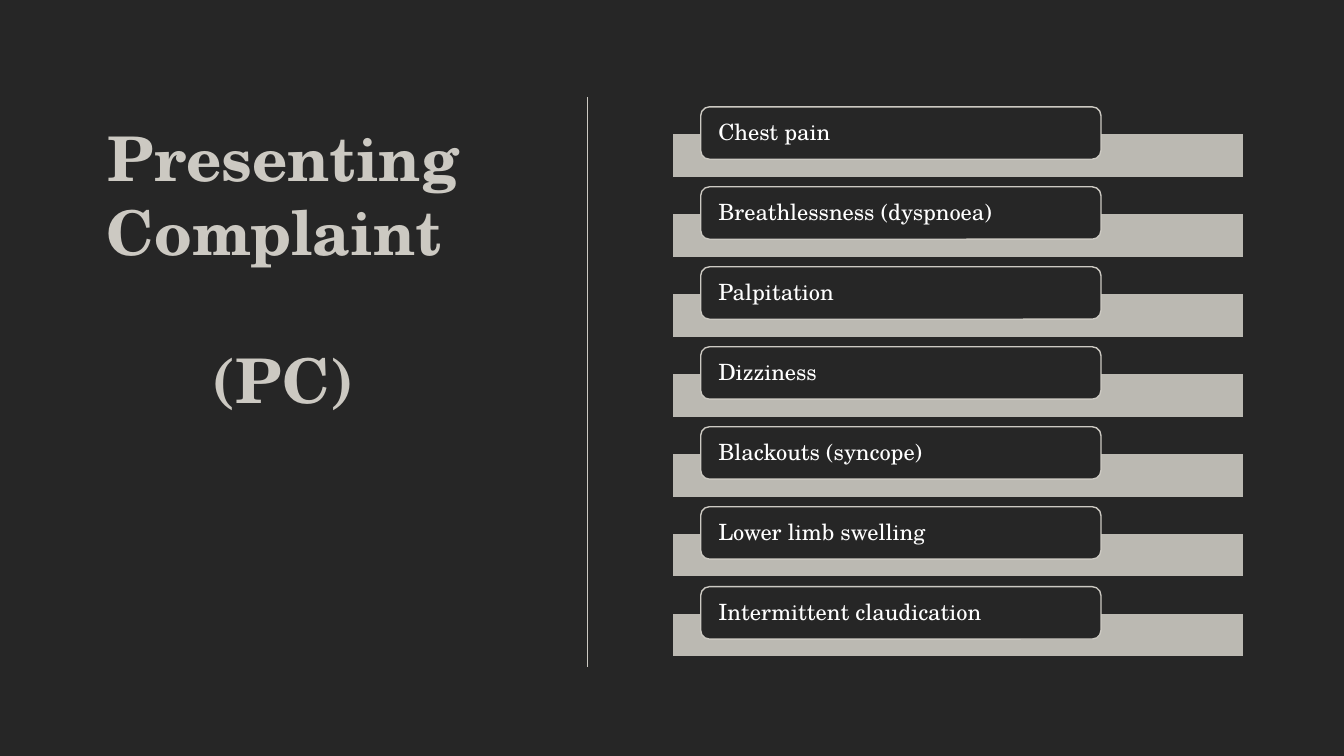
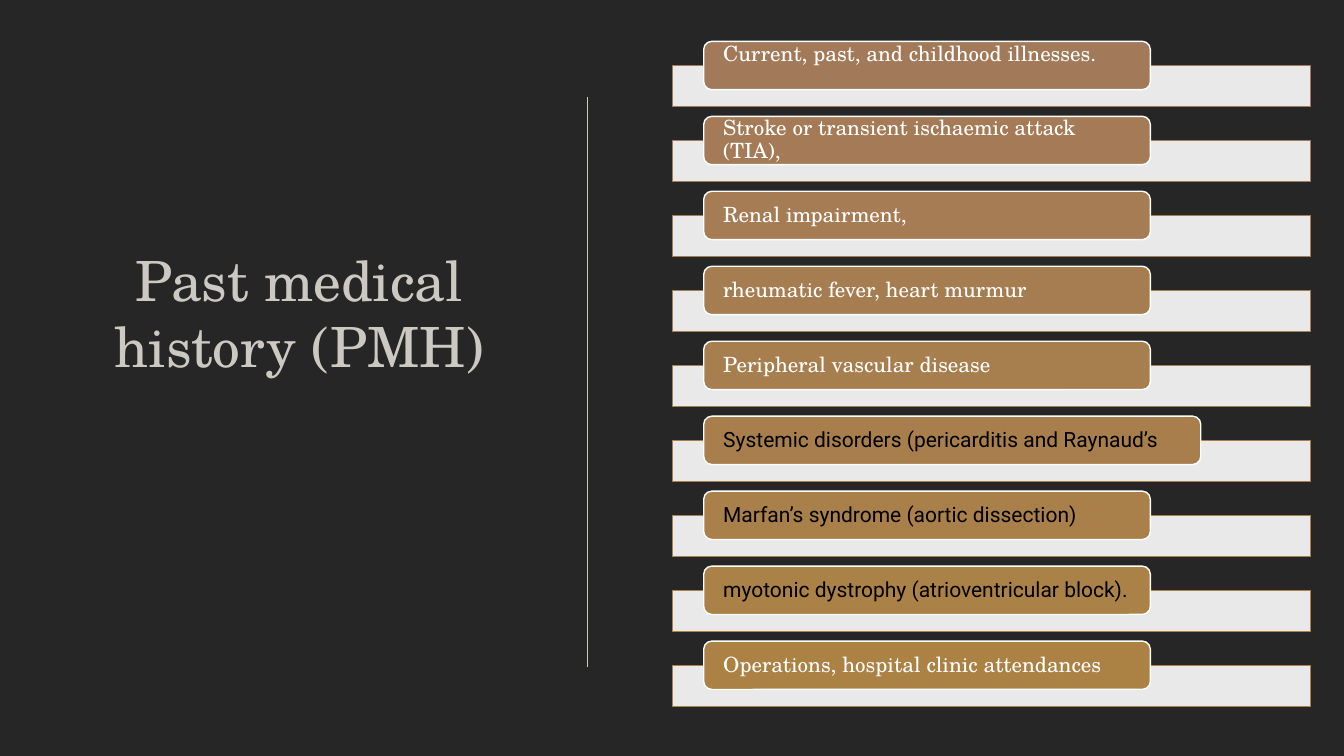
from lxml import etree
from pptx import Presentation, util as u
from pptx.dml.color import RGBColor
from pptx.enum import shapes, text
from pptx.oxml.ns import qn

INK, STONE, WHITE, BLACK = "262626", "CCC9C2", "FFFFFF", "000000"
SERIF, SANS = "TeX Gyre Schola", "Roboto"


def rgb(value):
    return RGBColor.from_string(value)


def blend(start, end, share):
    pairs = zip(rgb(start), rgb(end))
    return "".join(f"{round(a + (b - a) * share):02X}" for a, b in pairs)


class Deck:
    """Holds the shared style and the current slide."""

    def __init__(self):
        self.prs = Presentation()
        self.prs.slide_width = u.Inches(13.33)
        self.prs.slide_height = u.Inches(7.5)
        self.s = None

    def slide(self):
        self.s = self.prs.slides.add_slide(self.prs.slide_layouts[6])
        fill = self.s.background.fill
        fill.solid()
        fill.fore_color.rgb = rgb(INK)
        self.divider()

    def divider(self):
        x = u.Inches(5.83)
        line = self.s.shapes.add_connector(
            shapes.MSO_CONNECTOR.STRAIGHT, x, u.Inches(0.96), x, u.Inches(6.62))
        line.line.color.rgb = rgb(STONE)
        line.line.width = u.Pt(0.85)
        etree.SubElement(line._element.spPr, qn("a:effectLst"))

    def style(self, p, size, color, font=SERIF, bold=False):
        for r in p.runs:
            r.font.size = u.Pt(size)
            r.font.name = font
            r.font.bold = bold
            r.font.color.rgb = rgb(color)

    def title(self, content, x, y, h, size, bold=False, gap=0):
        sp = self.s.shapes.add_textbox(*map(u.Inches, (x, y, 4.06, h)))
        tf = sp.text_frame
        tf.word_wrap = True
        tf.text = content
        for i, p in enumerate(tf.paragraphs):
            p.alignment = text.PP_ALIGN.CENTER
            if i:
                p.space_before = u.Pt(gap)
            self.style(p, size, STONE, bold=bold)

    def shape(self, kind, x, y, w, h, fill, line):
        sp = self.s.shapes.add_shape(kind, *map(u.Inches, (x, y, w, h)))
        sp.shadow.inherit = False
        sp.fill.solid()
        sp.fill.fore_color.rgb = rgb(fill)
        sp.line.color.rgb = rgb(line)
        sp.line.width = u.Pt(1)
        return sp

    def bar(self, y, w, h, fill, line):
        sp = self.shape(shapes.MSO_SHAPE.RECTANGLE, 6.67, y, w, h, fill, line)
        color = sp._element.spPr.find(qn("a:solidFill"))[0]
        etree.SubElement(color, qn("a:alpha"), val="90000")

    def label(self, content, x, y, w, h, fill, line, size, inset,
              color=WHITE, font=SERIF, lift=0):
        sp = self.shape(shapes.MSO_SHAPE.ROUNDED_RECTANGLE, x, y, w, h, fill, line)
        tf = sp.text_frame
        tf.word_wrap = True
        tf.vertical_anchor = text.MSO_ANCHOR.MIDDLE
        tf.margin_left = tf.margin_right = u.Inches(inset)
        tf.margin_top = 0
        tf.margin_bottom = u.Inches(lift)
        tf.text = content
        p = tf.paragraphs[0]
        p.alignment = text.PP_ALIGN.LEFT
        p.line_spacing = 0.9
        self.style(p, size, color, font)

    def labelled_bars(self, items, top, last, x, w, h, bar_w, bar_h, drop,
                      size, inset, accents, tone):
        steps = len(items) - 1
        for i, (content, extra) in enumerate(items):
            y = top + (last - top) * i / steps
            accent = blend(*accents, i / steps)
            options = dict(extra)
            width = w + options.pop("widen", 0)
            self.bar(y + drop, bar_w, bar_h, tone, accent)
            self.label(content, x, y, width, h, accent, tone, size, inset, **options)


def main():
    deck = Deck()

    deck.slide()
    deck.title("Presenting Complaint \n(PC)", 0.78, 1.14, 4.05, 44,
               bold=True, gap=52.8)
    complaints = ["Chest pain", "Breathlessness (dyspnoea)", "Palpitation",
                  "Dizziness", "Blackouts (syncope)", "Lower limb swelling",
                  "Intermittent claudication"]
    deck.labelled_bars([(c, {}) for c in complaints], top=1.06, last=5.82,
                       x=6.95, w=3.97, h=0.52, bar_w=5.67, bar_h=0.44,
                       drop=0.26, size=16, inset=0.15,
                       accents=(INK, INK), tone=STONE)

    deck.slide()
    deck.title("Past medical history (PMH)", 0.94, 2.39, 1.76, 39.6)
    dark = {"color": BLACK, "font": SANS}
    history = [
        ("Current, past, and childhood illnesses.", {"lift": 0.22}),
        ("Stroke or transient ischaemic attack (TIA),", {}),
        ("Renal impairment,", {}),
        ("rheumatic fever, heart murmur", {}),
        ("Peripheral vascular disease", {}),
        ("Systemic disorders (pericarditis and Raynaud’s", {**dark, "widen": 0.5}),
        ("Marfan’s syndrome (aortic dissection)", dark),
        ("myotonic dystrophy (atrioventricular block).", dark),
        ("Operations, hospital clinic attendances", {}),
    ]
    deck.labelled_bars(history, top=0.41, last=6.36,
                       x=6.98, w=4.43, h=0.48, bar_w=6.33, bar_h=0.41,
                       drop=0.24, size=15, inset=0.17,
                       accents=("A37A59", "AB8244"), tone=WHITE)

    deck.prs.save("out.pptx")


if __name__ == "__main__":
    main()
